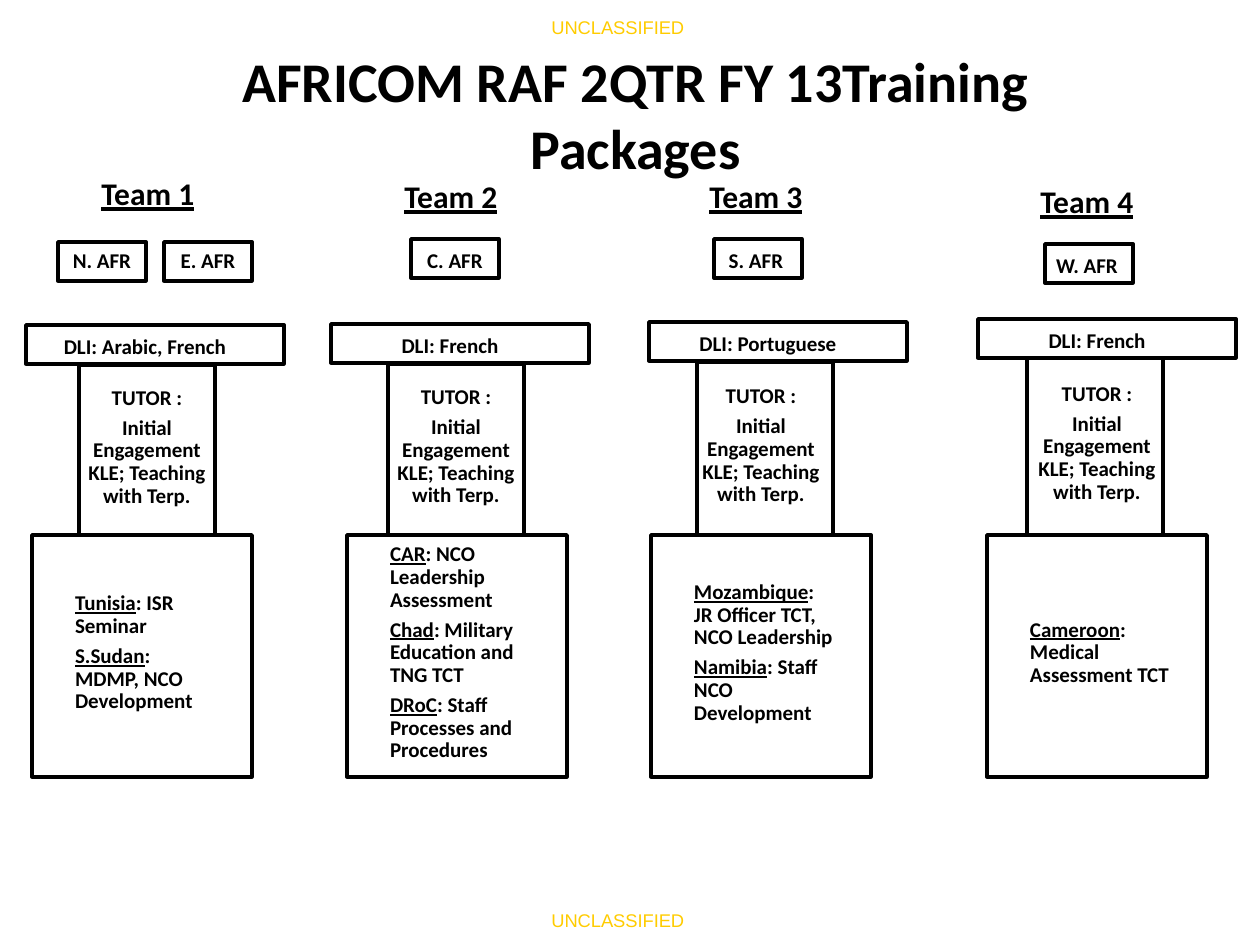
from pptx import Presentation
from pptx.dml.color import RGBColor
from pptx.enum.shapes import MSO_SHAPE
from pptx.enum.text import MSO_ANCHOR, MSO_AUTO_SIZE, PP_ALIGN
from pptx.util import Pt

# Content: every position is in px
TITLE = "AFRICOM RAF 2QTR FY 13Training Packages"
MARKING = "UNCLASSIFIED"
ENGAGEMENT = ["TUTOR :", "Initial Engagement KLE; Teaching with Terp."]
# heading: left, top; regions: text, left, top, label shift;
# language and tower: left, top; tower label: left, width; package: left
TEAMS = [
    dict(name="Team 1", heading=(89, 168),
         regions=[("N. AFR", 58, 242, (0, 0)), ("E. AFR", 164, 242, (0, 0))],
         language="DLI: Arabic, French", bar=(26, 325),
         tower=(79, 365), tower_label=(84, 126), package=32,
         countries=[("Tunisia", ": ISR Seminar"),
                    ("S.Sudan", ": MDMP, NCO Development")]),
    dict(name="Team 2", heading=(392, 171),
         regions=[("C. AFR", 411, 239, (0, 3))],
         language="DLI: French", bar=(331, 324),
         tower=(388, 364), tower_label=(388, 136), package=347,
         countries=[("CAR", ": NCO Leadership Assessment"),
                    ("Chad", ": Military Education and TNG TCT"),
                    ("DRoC", ": Staff Processes and Procedures")]),
    dict(name="Team 3", heading=(697, 171),
         regions=[("S. AFR", 714, 239, (-2, 3))],
         language="DLI: Portuguese", bar=(649, 322),
         tower=(697, 362), tower_label=(693, 136), package=651,
         countries=[("Mozambique", ": JR Officer TCT, NCO Leadership"),
                    ("Namibia", ": Staff NCO Development")]),
    dict(name="Team 4", heading=(1028, 176),
         regions=[("W. AFR", 1045, 244, (-2, 3))],
         language="DLI: French", bar=(978, 319),
         tower=(1027, 357), tower_label=(1029, 136), package=987,
         countries=[("Cameroon", ": Medical Assessment TCT")]),
]

BLACK = RGBColor(0, 0, 0)
THEME = dict(
    fill=RGBColor(255, 255, 255), line=BLACK, line_width=Pt(2),
    title=dict(name="Calibri", size=Pt(32), bold=True, color=BLACK),
    heading=dict(name="Calibri", size=Pt(18), bold=True, underline=True, color=BLACK),
    body=dict(name="Calibri", size=Pt(12), bold=True, color=BLACK),
    marking=dict(name="Arial", size=Pt(10.5), color=RGBColor(255, 204, 0)),
)
INSET = 1
PACKAGE_TOP = 535


def px(*lengths):
    return [round(length * 914400 / 126) for length in lengths]


def add_run(paragraph, text, style, **changes):
    run = paragraph.add_run()
    run.text = text
    for key, value in {**style, **changes}.items():
        if key == "color":
            run.font.color.rgb = value
        else:
            setattr(run.font, key, value)


def add_line(area, text, style):
    """Single unwrapped line of text."""
    box = slide.shapes.add_textbox(*px(*area))
    box.text_frame.word_wrap = False
    box.text_frame.auto_size = MSO_AUTO_SIZE.SHAPE_TO_FIT_TEXT
    add_run(box.text_frame.paragraphs[0], text, style)


def add_box(frame_area, label_area, paragraphs, align=PP_ALIGN.CENTER):
    """Outlined box grouped with its label; a paragraph is a list of (text, underline)."""
    group = slide.shapes.add_group_shape()
    frame = group.shapes.add_shape(MSO_SHAPE.RECTANGLE, *px(*frame_area))
    frame.shadow.inherit = False
    frame.fill.solid()
    frame.fill.fore_color.rgb = THEME["fill"]
    frame.line.color.rgb = THEME["line"]
    frame.line.width = THEME["line_width"]

    text_frame = group.shapes.add_textbox(*px(*label_area)).text_frame
    text_frame.word_wrap = True
    text_frame.vertical_anchor = MSO_ANCHOR.MIDDLE
    for side in ("left", "top", "right", "bottom"):
        setattr(text_frame, f"margin_{side}", px(INSET)[0])
    for index, runs in enumerate(paragraphs):
        paragraph = text_frame.add_paragraph() if index else text_frame.paragraphs[0]
        for key, value in dict(alignment=align, line_spacing=0.9, space_after=Pt(4.2)).items():
            setattr(paragraph, key, value)
        for text, underline in runs:
            add_run(paragraph, text, THEME["body"], underline=underline)


presentation = Presentation()
presentation.slide_width, presentation.slide_height = px(1260, 945)
slide = presentation.slides.add_slide(presentation.slide_layouts[5])

# Markings at top and bottom
for top in (10, 903):
    add_line((539, top, 160, 35), MARKING, THEME["marking"])

# Title
title = slide.shapes.title
title.left, title.top, title.width, title.height = px(158, 73, 955, 81)
title.text_frame.auto_size = MSO_AUTO_SIZE.NONE
title.text_frame.word_wrap = True
title.text_frame.vertical_anchor = MSO_ANCHOR.MIDDLE
title.text_frame.paragraphs[0].alignment = PP_ALIGN.CENTER
add_run(title.text_frame.paragraphs[0], TITLE, THEME["title"])

for team in TEAMS:
    add_line((*team["heading"], 120, 50), team["name"], THEME["heading"])

    # Regions
    for text, left, top, (shift_x, shift_y) in team["regions"]:
        add_box((left, top, 88, 39), (left + shift_x, top + shift_y, 88, 39), [[(text, False)]])

    # Engagement tower, standing on the package box
    left, top = team["tower"]
    label_left, label_width = team["tower_label"]
    height = PACKAGE_TOP - top
    add_box((left, top, 136, height), (label_left, top, label_width, height - 5),
            [[(text, False)] for text in ENGAGEMENT])

    # Language bar
    left, top = team["bar"]
    add_box((left, top, 258, 39), (left - 10, top + 3, 258, 39), [[(team["language"], False)]])

    # Country training package
    left = team["package"]
    add_box((left, PACKAGE_TOP, 220, 242), (left + 42, PACKAGE_TOP, 142, 236),
            [[(country, True), (training, False)] for country, training in team["countries"]],
            PP_ALIGN.LEFT)

presentation.save("out.pptx")
